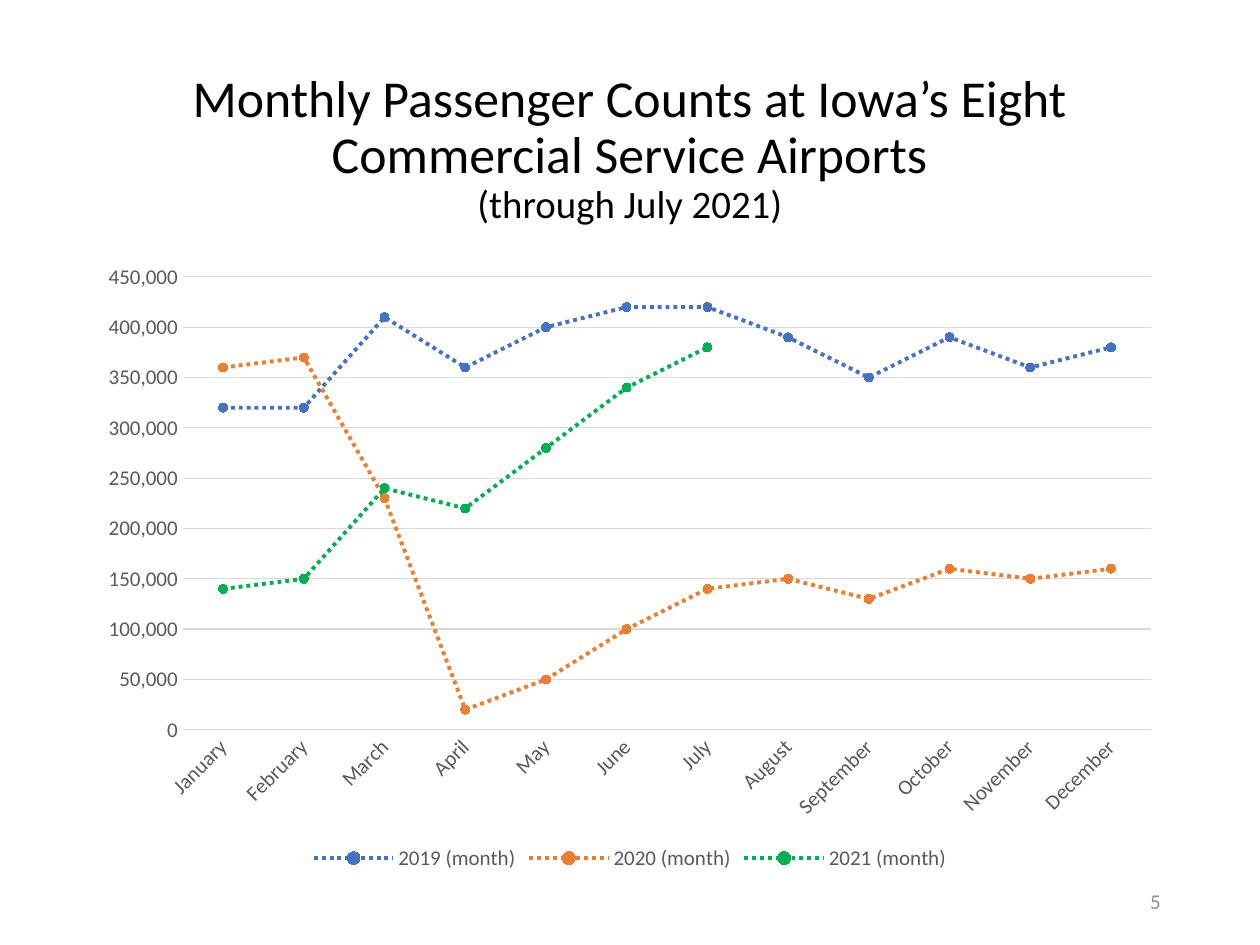
from pptx import Presentation
from pptx.chart.data import CategoryChartData
from pptx.dml.color import RGBColor
from pptx.enum.chart import XL_CHART_TYPE as ChartType
from pptx.enum.chart import XL_LEGEND_POSITION as LegendPosition
from pptx.enum.chart import XL_MARKER_STYLE as MarkerStyle
from pptx.enum.chart import XL_TICK_MARK as TickMark
from pptx.enum.dml import MSO_LINE as LineDash
from pptx.enum.text import MSO_ANCHOR as Anchor
from pptx.enum.text import PP_ALIGN as Align
from pptx.util import Inches, Pt

FONT = "Calibri"
BLACK = RGBColor(0x00, 0x00, 0x00)
DARK_GRAY = RGBColor(0x59, 0x59, 0x59)
MID_GRAY = RGBColor(0x8C, 0x8C, 0x8C)
LIGHT_GRAY = RGBColor(0xD9, 0xD9, 0xD9)
BLUE = RGBColor(0x44, 0x72, 0xC4)
ORANGE = RGBColor(0xED, 0x7D, 0x31)
GREEN = RGBColor(0x00, 0xB0, 0x50)

LEFT = 0.69
WIDTH = 8.62
MONTHS = ["January", "February", "March", "April", "May", "June", "July",
          "August", "September", "October", "November", "December"]
PASSENGER_THOUSANDS = [
    ("2019 (month)", BLUE,
     [320, 320, 410, 360, 400, 420, 420, 390, 350, 390, 360, 380]),
    ("2020 (month)", ORANGE,
     [360, 370, 230, 20, 50, 100, 140, 150, 130, 160, 150, 160]),
    ("2021 (month)", GREEN,
     [140, 150, 240, 220, 280, 340, 380] + [None] * 5),
]


def style_font(font, size, color):
    font.name = FONT
    font.size = Pt(size)
    font.color.rgb = color


def style_line(line, color, width):
    line.color.rgb = color
    line.width = Pt(width)


def add_text(page, left, top, width, height, lines, color, align, anchor, spacing=1.0):
    box = page.shapes.add_textbox(Inches(left), Inches(top), Inches(width), Inches(height))
    frame = box.text_frame
    frame.word_wrap = True
    frame.vertical_anchor = anchor
    frame.text = "\n".join(text for text, size in lines)
    for para, (text, size) in zip(frame.paragraphs, lines):
        para.alignment = align
        para.line_spacing = spacing
        for span in para.runs:
            style_font(span.font, size, color)


def style_axes(chart):
    for axis in (chart.category_axis, chart.value_axis):
        axis.major_tick_mark = TickMark.NONE
        axis.minor_tick_mark = TickMark.NONE
        style_font(axis.tick_labels.font, 12, DARK_GRAY)
    months, counts = chart.category_axis, chart.value_axis
    style_line(months.format.line, LIGHT_GRAY, 0.75)
    months._element.txPr.bodyPr.set("rot", "-2700000")
    counts.minimum_scale = 0
    counts.maximum_scale = 450000
    counts.major_unit = 50000
    counts.tick_labels.number_format = "#,##0"
    counts.tick_labels.number_format_is_linked = False
    counts.format.line.fill.background()
    counts.has_major_gridlines = True
    style_line(counts.major_gridlines.format.line, LIGHT_GRAY, 0.75)


def style_series(series, color):
    series.smooth = False
    style_line(series.format.line, color, 2.25)
    series.format.line.dash_style = LineDash.ROUND_DOT
    marker = series.marker
    marker.style = MarkerStyle.CIRCLE
    marker.size = 5
    marker.format.fill.solid()
    marker.format.fill.fore_color.rgb = color
    marker.format.line.color.rgb = color


def add_passenger_chart(page):
    data = CategoryChartData(number_format="#,##0")
    data.categories = MONTHS
    for name, color, thousands in PASSENGER_THOUSANDS:
        data.add_series(name, [None if value is None else value * 1000 for value in thousands])
    chart = page.shapes.add_chart(ChartType.LINE_MARKERS, Inches(LEFT), Inches(2),
                                  Inches(WIDTH), Inches(4.95), data).chart
    chart.has_title = False
    style_font(chart.font, 10, BLACK)
    chart.plots[0].vary_by_categories = False
    style_axes(chart)
    for series, (name, color, thousands) in zip(chart.plots[0].series, PASSENGER_THOUSANDS):
        style_series(series, color)
    chart.has_legend = True
    chart.legend.position = LegendPosition.BOTTOM
    chart.legend.include_in_layout = False
    style_font(chart.legend.font, 12, DARK_GRAY)


def main():
    deck = Presentation()
    deck.slide_width = Inches(10)
    deck.slide_height = Inches(7.5)
    page = deck.slides.add_slide(deck.slide_layouts[6])
    add_passenger_chart(page)
    add_text(page, 7.06, 6.95, 2.25, 0.4, [("5", 12)], MID_GRAY, Align.RIGHT, Anchor.MIDDLE)
    title = [("Monthly Passenger Counts at Iowa’s Eight Commercial Service Airports", 29.6),
             ("(through July 2021)", 22.2)]
    add_text(page, LEFT, 0.4, WIDTH, 1.45, title, BLACK, Align.CENTER, Anchor.BOTTOM, 0.9)
    deck.save("out.pptx")


if __name__ == "__main__":
    main()
